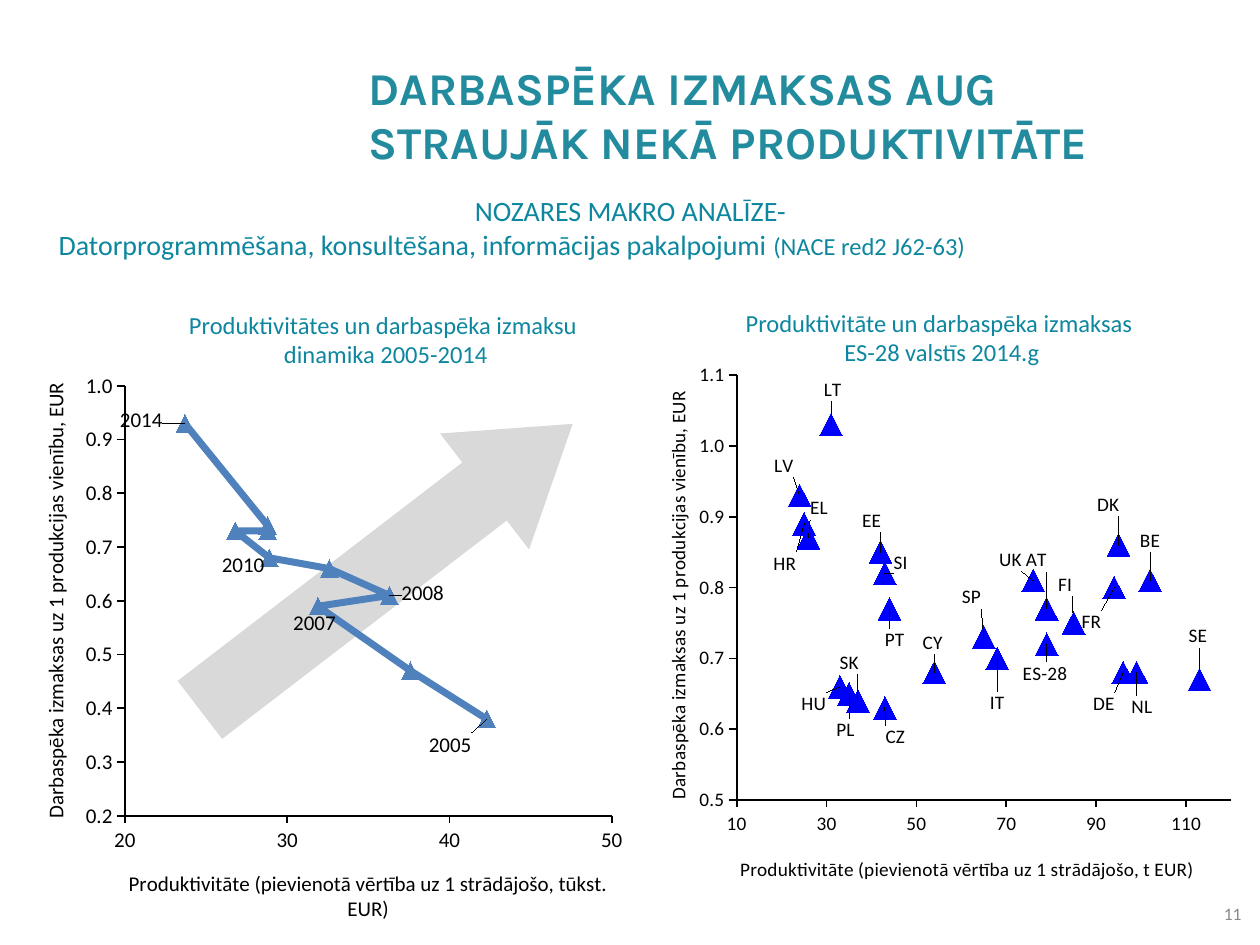
from dataclasses import dataclass

from lxml import etree
from pptx import Presentation
from pptx import util as u
from pptx.chart import data as chart_data
from pptx.dml.color import RGBColor
from pptx.enum import chart as charts, shapes, text
from pptx.oxml import ns

Pt = u.Pt


@dataclass(frozen=True)
class Theme:
    heading: str = "228B9D"
    accent: str = "0D879F"
    ink: str = "000000"
    muted: str = "898989"
    arrow: str = "D9D9D9"
    paper: str = "FFFFFF"
    trend: str = "4F81BD"
    country: str = "0000FF"
    heading_font: str = "Karla"
    body_font: str = "Calibri"
    heading_size: int = 26
    lead_size: int = 16
    caption_size: int = 14
    number_size: int = 10


THEME = Theme()

# Each point: productivity, labour cost, label, label offset from the marker (pt)
TREND = [
    (42.3, 0.38, "2005", -21, 15), (37.6, 0.47), (31.9, 0.59, "2007", -2, 10),
    (36.3, 0.61, "2008", 19, -1), (32.6, 0.66), (28.9, 0.68, "2010", -15, 4),
    (26.8, 0.73), (28.8, 0.73), (28.8, 0.74), (23.7, 0.93, "2014", -25, -2),
]
COUNTRIES = [
    (79, 0.72, "ES-28", -1, 17), (102, 0.81, "BE", 0, -23), (16, 1.19),
    (43, 0.63, "CZ", 6, 17), (95, 0.86, "DK", -6, -23), (96, 0.68, "DE", -11, 18),
    (42, 0.85, "EE", -5, -18), (26, 0.87, "EL", 6, -17), (65, 0.73, "SP", -7, -23),
    (94, 0.8, "FR", -13, 20), (25, 0.89, "HR", -11, 23), (68, 0.7, "IT", 0, 26),
    (54, 0.68, "CY", -1, -17), (24, 0.93, "LV", -9, -17), (31, 1.03, "LT", 1, -20),
    (29, 2.58), (33, 0.66, "HU", -15, 10), (99, 0.68, "NL", 3, 20),
    (79, 0.77, "AT", -6, -28), (35, 0.65, "PL", -2, 21), (44, 0.77, "PT", 3, 18),
    (43, 0.82, "SI", 9, -6), (37, 0.64, "SK", -5, -22), (85, 0.75, "FI", -5, -22),
    (113, 0.67, "SE", -1, -25), (76, 0.81, "UK", -13, -12),
]


def color(value):
    return RGBColor.from_string(value)


def style_font(font, size, value, name=THEME.body_font, bold=False):
    font.size, font.name, font.bold = Pt(size), name, bold
    font.color.rgb = color(value)


def add_text(page, box, paragraphs, size=14, value=THEME.accent, name=THEME.body_font,
             bold=False, align=text.PP_ALIGN.LEFT, anchor=text.MSO_ANCHOR.TOP):
    """Each paragraph is a list of (words, format) spans; format may set size."""
    frame = page.shapes.add_textbox(*map(Pt, box)).text_frame
    frame.word_wrap = True
    frame.vertical_anchor = anchor
    aligns = align if isinstance(align, list) else [align] * len(paragraphs)
    for index, spans in enumerate(paragraphs):
        para = frame.paragraphs[0] if index == 0 else frame.add_paragraph()
        para.alignment = aligns[index]
        for words, changes in spans:
            span = para.add_run()
            span.text = words
            style_font(span.font, changes.get("size", size), value, name, bold)


def set_layout(parent, index, inner=False, **values):
    """Give a chart part a manual layout, as fractions of the chart."""
    for old in parent.findall(ns.qn("c:layout")):
        parent.remove(old)
    layout = etree.Element(ns.qn("c:layout"))
    manual = etree.SubElement(layout, ns.qn("c:manualLayout"))
    entries = {"layoutTarget": "inner"} if inner else {}
    if "mode" in values:
        mode = values.pop("mode")
        entries.update(xMode=mode, yMode=mode)
    entries.update(values)
    for tag, value in entries.items():
        etree.SubElement(manual, ns.qn("c:" + tag)).set("val", str(value))
    parent.insert(index, layout)


def style_axis(axis, limits, number_format, title, size, place, upright=False):
    axis.minimum_scale, axis.maximum_scale, axis.major_unit = limits
    axis.has_major_gridlines = False
    axis.major_tick_mark = charts.XL_TICK_MARK.OUTSIDE
    axis.crosses = charts.XL_AXIS_CROSSES.MINIMUM
    axis.format.line.color.rgb = color(THEME.ink)
    axis.format.line.width = Pt(1)
    axis.tick_labels.number_format = number_format
    axis.tick_labels.number_format_is_linked = False
    style_font(axis.tick_labels.font, size, THEME.ink)
    frame = axis.axis_title.text_frame
    span = frame.paragraphs[0].add_run()
    span.text = title
    style_font(span.font, size, THEME.ink)
    if upright:
        body = frame._txBody.find(ns.qn("a:bodyPr"))
        body.set("rot", "-5400000")
        body.set("vert", "horz")
    set_layout(axis.axis_title._element, 1, mode="edge", x=place[0], y=place[1])


def add_scatter(page, box, points, series_name, unit, x_limits, y_limits, size, marker_size,
                value, plot, x_title_place, y_title_place, line_width=None, fill=None):
    data = chart_data.XyChartData()
    entries = data.add_series(series_name)
    for point in points:
        entries.add_data_point(*point[:2])
    kind = charts.XL_CHART_TYPE.XY_SCATTER_SMOOTH if line_width else charts.XL_CHART_TYPE.XY_SCATTER
    chart = page.shapes.add_chart(kind, *map(Pt, box), data).chart
    chart.has_title = chart.has_legend = False
    style_font(chart.font, size, THEME.ink)
    chart.plots[0].vary_by_categories = False

    # Plot area and axes
    area = chart._chartSpace.find(".//" + ns.qn("c:plotArea"))
    set_layout(area, 0, inner=True, mode="edge", **dict(zip("xywh", plot)))
    if fill:
        shape_format = etree.SubElement(area, ns.qn("c:spPr"))
        solid = etree.SubElement(shape_format, ns.qn("a:solidFill"))
        etree.SubElement(solid, ns.qn("a:srgbClr")).set("val", fill)
    style_axis(chart.category_axis, x_limits, "0",
               f"Produktivitāte (pievienotā vērtība uz 1 strādājošo, {unit} EUR)",
               size, x_title_place)
    style_axis(chart.value_axis, y_limits, "0.0",
               "Darbaspēka izmaksas uz 1 produkcijas vienību, EUR",
               size, y_title_place, upright=True)

    # Series
    series = chart.plots[0].series[0]
    series.smooth = bool(line_width)
    if line_width:
        series.format.line.color.rgb = color(value)
        series.format.line.width = Pt(line_width)
    else:
        series.format.line.fill.background()
    marker = series.marker
    marker.style, marker.size = charts.XL_MARKER_STYLE.TRIANGLE, marker_size
    marker.format.fill.solid()
    marker.format.fill.fore_color.rgb = color(value)
    marker.format.line.color.rgb = color(value)

    # Point labels
    for index, point in enumerate(points):
        if len(point) == 2:
            continue
        words, dx, dy = point[2:]
        label = series.points[index].data_label
        span = label.text_frame.paragraphs[0].add_run()
        span.text = words
        style_font(span.font, size, THEME.ink)
        label.position = charts.XL_LABEL_POSITION.CENTER
        element = label._get_or_add_dLbl()
        set_layout(element, 1, x=round(dx / box[2], 4), y=round(dy / box[3], 4))


def add_arrow(page, box):
    arrow = page.shapes.add_shape(shapes.MSO_SHAPE.RIGHT_ARROW, *map(Pt, box))
    arrow.adjustments[0], arrow.adjustments[1] = 0.5, 0.76
    arrow.rotation = 322.5
    arrow.shadow.inherit = False
    arrow.fill.solid()
    arrow.fill.fore_color.rgb = color(THEME.arrow)
    arrow.line.fill.background()


def add_header(page, box):
    left, top, width, height = box
    add_text(page, (left + 177, top, 480, 81),
             [[("DARBASPĒKA IZMAKSAS AUG STRAUJĀK NEKĀ PRODUKTIVITĀTE", {})]],
             size=THEME.heading_size, value=THEME.heading, name=THEME.heading_font, bold=True)
    add_text(page, (left, top + 76.5, width, height - 76.5),
             [[("NOZARES MAKRO ANALĪZE-", {})],
              [("Datorprogrammēšana, konsultēšana, informācijas pakalpojumi ", {}),
               ("(NACE red2 J62-63)", {"size": THEME.caption_size})]],
             size=THEME.lead_size, align=[text.PP_ALIGN.CENTER, text.PP_ALIGN.LEFT])


def add_caption(page, box, lines):
    add_text(page, box, [[(line, {})] for line in lines],
             size=THEME.caption_size, align=text.PP_ALIGN.CENTER)


def add_trend_panel(page, box):
    left, top, width, height = box
    add_arrow(page, (left + 78.5, top + 108.7, 268.5, 83.5))
    add_scatter(page, (left, top + 28, width, height - 28), TREND, "Series 1", "tūkst.",
                (20, 50, 10), (0.2, 1.0, 0.1), 12, 10, THEME.trend,
                (0.176, 0.058, 0.773, 0.748), (0.176, 0.893), (0.037, 0.047), line_width=4)
    add_caption(page, (left + 80.5, top, 264, 41),
                ["Produktivitātes un darbaspēka izmaksu ", "dinamika 2005-2014"])


def add_country_panel(page, box):
    left, top, width, height = box
    add_scatter(page, (left, top + 24, width, height - 24), COUNTRIES, "y", "t",
                (10, 120, 20), (0.5, 1.1, 0.1), 11, 13, THEME.country,
                (0.19, 0.058, 0.773, 0.79), (0.19, 0.945), (0.072, 0.088), fill=THEME.paper)
    add_caption(page, (left + 20, top, 333.5, 41),
                ["Produktivitāte un darbaspēka izmaksas ", "ES-28 valstīs 2014.g"])


def main():
    deck = Presentation()
    deck.slide_width, deck.slide_height = Pt(720), Pt(540)
    page = deck.slides.add_slide(deck.slide_layouts[6])
    add_header(page, (26.5, 30.5, 667.5, 127.5))
    add_trend_panel(page, (8, 173.5, 360, 357))
    add_country_panel(page, (351.5, 172.5, 365.5, 334.5))
    add_text(page, (666.5, 510, 50, 23.5), [[("11", {})]], size=THEME.number_size,
             value=THEME.muted, align=text.PP_ALIGN.RIGHT, anchor=text.MSO_ANCHOR.MIDDLE)
    deck.save("out.pptx")


if __name__ == "__main__":
    main()
